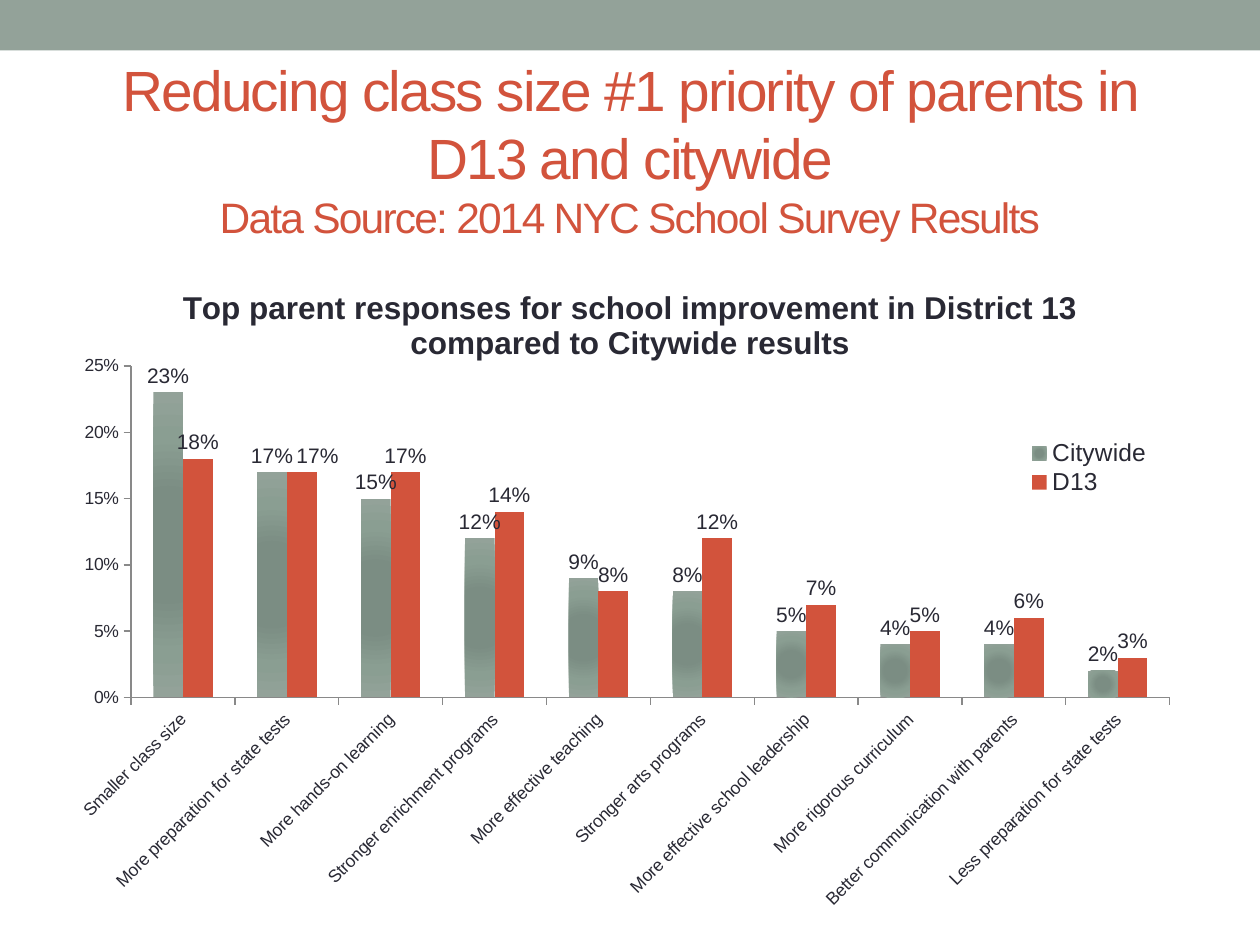
from dataclasses import dataclass

from pptx import Presentation
from pptx.chart.data import CategoryChartData
from pptx.dml.color import RGBColor
from pptx.enum.chart import XL_CHART_TYPE, XL_LABEL_POSITION, XL_LEGEND_POSITION, XL_TICK_MARK
from pptx.enum.shapes import MSO_SHAPE
from pptx.enum.text import MSO_ANCHOR, MSO_AUTO_SIZE, PP_ALIGN
from pptx.oxml import parse_xml
from pptx.oxml.ns import nsdecls
from pptx.util import Inches, Pt

COLUMNS = XL_CHART_TYPE.COLUMN_CLUSTERED
OUTSIDE_END = XL_LABEL_POSITION.OUTSIDE_END
LEGEND_RIGHT = XL_LEGEND_POSITION.RIGHT
TICK_OUT = XL_TICK_MARK.OUTSIDE
TICK_NONE = XL_TICK_MARK.NONE

SAGE = RGBColor(0x93, 0xA2, 0x99)
BRICK = RGBColor(0xD2, 0x53, 0x3C)
INK = RGBColor(0x29, 0x29, 0x34)
AXIS_GREY = RGBColor(0x89, 0x89, 0x89)
FONT = "Arial"
PERCENT = '0"%"'
SAGE_STOPS = ((0, "7B8E82"), (34, "7B8D83"), (70, "8A9E92"), (100, "93A299"))


@dataclass
class Respondents:
    name: str
    shares: tuple[int, ...]


RESPONSES = (
    "Smaller class size",
    "More preparation for state tests",
    "More hands-on learning",
    "Stronger enrichment programs",
    "More effective teaching",
    "Stronger arts programs",
    "More effective school leadership",
    "More rigorous curriculum",
    "Better communication with parents",
    "Less preparation for state tests",
)
GROUPS = (
    Respondents("Citywide", (23, 17, 15, 12, 9, 8, 5, 4, 4, 2)),
    Respondents("D13", (18, 17, 17, 14, 8, 12, 7, 5, 6, 3)),
)


def style_font(font, size: float, color: RGBColor = INK, bold: bool = False) -> None:
    font.name = FONT
    font.size = Pt(size)
    font.bold = bold
    font.color.rgb = color


def layout_xml(x: float, y: float, width: float, height: float, inner: bool = False):
    """Place a chart part by fractions of the chart area."""
    target = '<c:layoutTarget val="inner"/>' if inner else ""
    return parse_xml(
        f'<c:layout {nsdecls("c")}><c:manualLayout>{target}'
        '<c:xMode val="edge"/><c:yMode val="edge"/>'
        f'<c:x val="{x}"/><c:y val="{y}"/><c:w val="{width}"/><c:h val="{height}"/>'
        "</c:manualLayout></c:layout>"
    )


def set_layout(part, layout, index: int) -> None:
    for old in part.xpath("c:layout"):
        part.remove(old)
    part.insert(index, layout)


def fill_radial(series) -> None:
    stops = "".join(
        f'<a:gs pos="{position * 1000}"><a:srgbClr val="{color}"/></a:gs>'
        for position, color in SAGE_STOPS
    )
    gradient = parse_xml(
        f'<a:gradFill {nsdecls("a")} rotWithShape="1"><a:gsLst>{stops}</a:gsLst>'
        '<a:path path="circle"><a:fillToRect l="50000" t="50000" r="50000" b="50000"/>'
        "</a:path></a:gradFill>"
    )
    series.format.fill.solid()
    solid = series._element.xpath("c:spPr/a:solidFill")[0]
    solid.getparent().replace(solid, gradient)


def label_values(series) -> None:
    labels = series.data_labels
    labels.show_value = True
    labels.position = OUTSIDE_END
    labels.number_format = PERCENT
    labels.number_format_is_linked = False
    style_font(labels.font, 12)


def shift_label(series, index: int, dx: float) -> None:
    """Move one value label sideways, clear of its neighbour."""
    label = series.points[index].data_label
    style_font(label.font, 12)
    label.position = OUTSIDE_END
    element = series._element.xpath(f"c:dLbls/c:dLbl[c:idx/@val='{index}']")[0]
    offset = parse_xml(
        f'<c:layout {nsdecls("c")}><c:manualLayout><c:x val="{dx}"/><c:y val="0"/>'
        "</c:manualLayout></c:layout>"
    )
    set_layout(element, offset, 1)
    element.insert(
        2, parse_xml(f"<c:numFmt {nsdecls('c')} formatCode='{PERCENT}' sourceLinked='0'/>")
    )


def style_axis(axis) -> None:
    axis.has_major_gridlines = False
    axis.major_tick_mark = TICK_OUT
    axis.minor_tick_mark = TICK_NONE
    axis.format.line.color.rgb = AXIS_GREY
    axis.format.line.width = Pt(0.75)
    style_font(axis.tick_labels.font, 10)


def add_band(slide) -> None:
    band = slide.shapes.add_shape(MSO_SHAPE.RECTANGLE, 0, 0, Inches(10), Inches(0.4))
    band.shadow.inherit = False
    band.fill.solid()
    band.fill.fore_color.rgb = SAGE
    band.line.fill.background()


def add_heading(slide) -> None:
    heading = slide.shapes.title
    heading.left, heading.top = Inches(0.5), Inches(0.64)
    heading.width, heading.height = Inches(9), Inches(1.08)
    frame = heading.text_frame
    frame.word_wrap = True
    frame.auto_size = MSO_AUTO_SIZE.NONE
    frame.vertical_anchor = MSO_ANCHOR.MIDDLE
    paragraph = frame.paragraphs[0]
    paragraph.alignment = PP_ALIGN.CENTER

    def add_run(text: str, size: float) -> None:
        run = paragraph.add_run()
        run.text = text
        style_font(run.font, size, BRICK)
        run.font._element.set("spc", "-100")

    add_run("Reducing class size #1 priority of parents in D13 and citywide", 32.4)
    paragraph.add_line_break()
    add_run("Data Source: 2014 NYC School Survey Results", 24.3)


def add_survey_chart(slide) -> None:
    data = CategoryChartData(number_format=PERCENT)
    data.categories = RESPONSES
    for group in GROUPS:
        data.add_series(group.name, group.shares)
    chart = slide.shapes.add_chart(
        COLUMNS, Inches(0.5), Inches(2.07), Inches(9), Inches(5.22), data
    ).chart
    style_font(chart.font, 10)

    # Chart title
    chart.has_title = True
    caption = chart.chart_title.text_frame.paragraphs[0].add_run()
    caption.text = (
        "Top parent responses for school improvement in District 13 "
        "compared to Citywide results"
    )
    style_font(caption.font, 18, bold=True)

    # Columns and their labels
    plot = chart.plots[0]
    plot.gap_width = 150
    plot.overlap = 0
    plot.vary_by_categories = False
    citywide, district = plot.series
    fill_radial(citywide)
    district.format.fill.solid()
    district.format.fill.fore_color.rgb = BRICK
    for series in (citywide, district):
        label_values(series)
    shift_label(district, 1, 0.014)
    plot_area = chart._chartSpace.xpath("c:chart/c:plotArea")[0]
    set_layout(plot_area, layout_xml(0.06, 0.16, 0.916, 0.504, inner=True), 0)

    # Axes
    style_axis(chart.category_axis)
    chart.category_axis._element.xpath("c:txPr/a:bodyPr")[0].set("rot", "-2700000")
    shares = chart.value_axis
    style_axis(shares)
    shares.minimum_scale, shares.maximum_scale, shares.major_unit = 0, 25, 5
    shares.tick_labels.number_format = PERCENT
    shares.tick_labels.number_format_is_linked = False

    # Legend
    chart.has_legend = True
    chart.legend.position = LEGEND_RIGHT
    chart.legend.include_in_layout = False
    style_font(chart.legend.font, 14)
    set_layout(chart.legend._element, layout_xml(0.84, 0.27, 0.13, 0.09), 1)


def main() -> None:
    deck = Presentation()
    deck.slide_width, deck.slide_height = Inches(10), Inches(7.5)
    slide = deck.slides.add_slide(deck.slide_layouts[5])
    add_band(slide)
    add_heading(slide)
    add_survey_chart(slide)
    deck.save("out.pptx")


if __name__ == "__main__":
    main()
